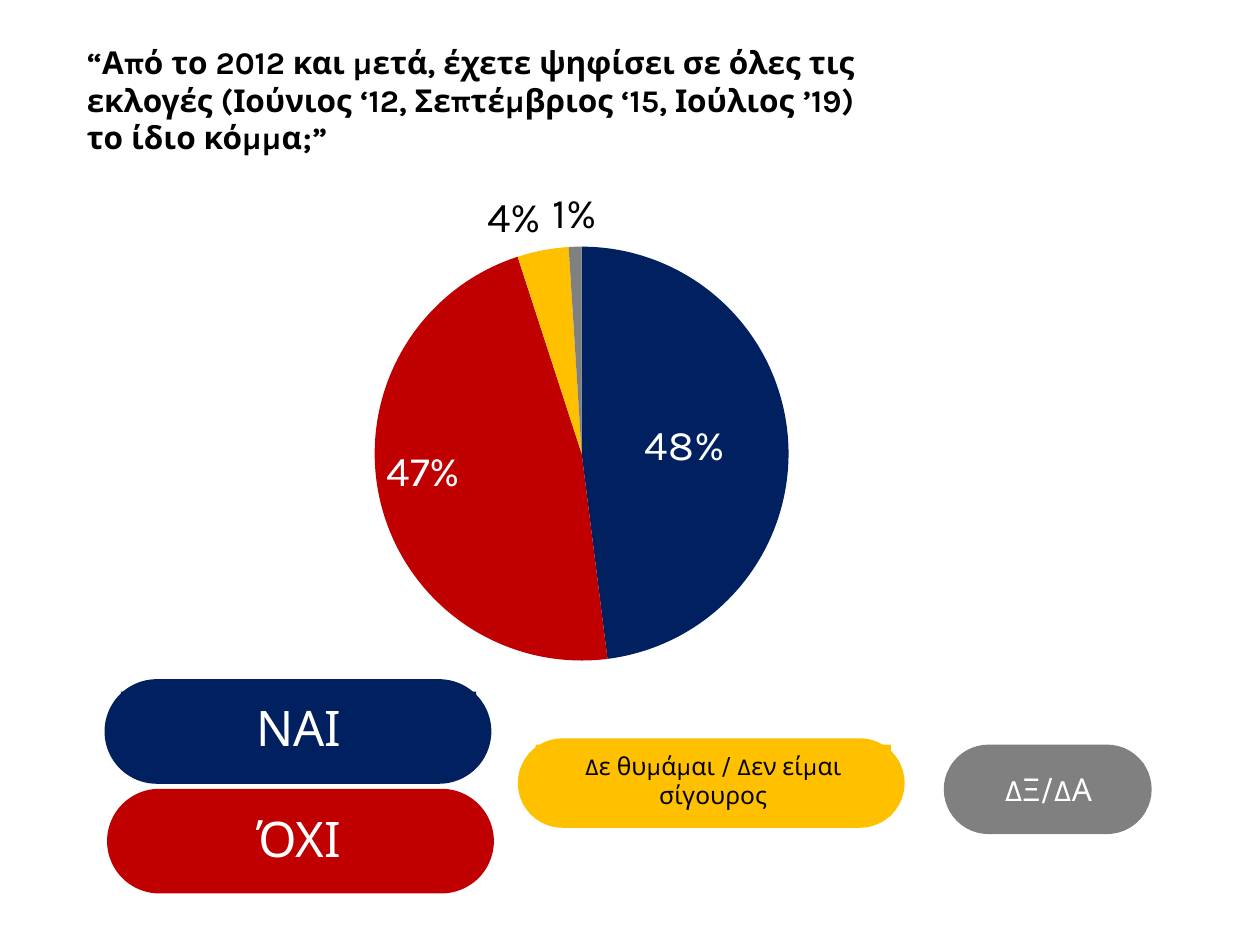
from dataclasses import dataclass
from typing import Optional

from lxml.etree import SubElement
from pptx import Presentation
from pptx.chart.data import CategoryChartData
from pptx.dml.color import RGBColor
from pptx.enum.chart import XL_CHART_TYPE as ChartType, XL_LABEL_POSITION as LabelPosition
from pptx.enum.shapes import MSO_SHAPE as Preset
from pptx.enum.text import PP_ALIGN as Align
from pptx.oxml.ns import qn
from pptx.util import Inches, Pt

SLIDE_WIDTH, SLIDE_HEIGHT = Inches(10), Inches(7.5)


@dataclass(frozen=True)
class Theme:
    navy: str = "002060"
    red: str = "C00000"
    yellow: str = "FFC000"
    gray: str = "808080"
    white: str = "FFFFFF"
    black: str = "000000"
    font: str = "Karla"
    chart_font: str = "Calibri"
    heading: int = 18
    percent: int = 24
    large: int = 28
    medium: int = 18
    small: int = 14


@dataclass(frozen=True)
class Area:
    """Percentages of the slide's width and height."""
    left: float
    top: float
    width: float
    height: float

    def lengths(self) -> tuple:
        return (int(SLIDE_WIDTH * self.left / 100), int(SLIDE_HEIGHT * self.top / 100),
                int(SLIDE_WIDTH * self.width / 100), int(SLIDE_HEIGHT * self.height / 100))


@dataclass(frozen=True)
class Answer:
    text: str
    share: int
    colour: str
    text_colour: str
    text_size: int
    pill: Area
    plate: Area
    label_position: LabelPosition
    label_colour: str
    plate_fill: Optional[str]


THEME = Theme()
QUESTION = ("“Από το 2012 και μετά, έχετε ψηφίσει σε όλες τις εκλογές "
            "(Ιούνιος ‘12, Σεπτέμβριος ‘15, Ιούλιος ’19) το ίδιο κόμμα;”")
QUESTION_AREA = Area(5.9, 3.87, 63.8, 13.47)
CHART_AREA = Area(11.4, 18.53, 76.4, 53.6)
PIE_LAYOUT = {"x": 0.24, "y": 0.14, "w": 0.43, "h": 0.82}
ANSWERS = [
    Answer("ΝΑΙ", 48, THEME.navy, THEME.white, THEME.large,
           Area(8.3, 71.87, 30.7, 11.07), Area(9.6, 73.2, 28.2, 7.6),
           LabelPosition.CENTER, THEME.white, THEME.navy),
    Answer("ΌΧΙ", 47, THEME.red, THEME.white, THEME.large,
           Area(8.5, 83.47, 30.7, 11.07), Area(8.9, 84.93, 29.6, 7.6),
           LabelPosition.INSIDE_END, THEME.white, None),
    Answer("Δε θυμάμαι / Δεν είμαι σίγουρος", 4, THEME.yellow, THEME.black, THEME.small,
           Area(41.1, 78.13, 30.7, 9.47), Area(42.5, 78.8, 28.2, 7.6),
           LabelPosition.OUTSIDE_END, THEME.black, THEME.yellow),
    Answer("ΔΞ/ΔΑ", 1, THEME.gray, THEME.white, THEME.medium,
           Area(74.9, 78.8, 16.5, 9.47), Area(75.6, 80.8, 15.2, 4.67),
           LabelPosition.OUTSIDE_END, THEME.black, THEME.gray),
]


def style_font(font, size: int, colour: str, name: str = THEME.font, bold: bool = False) -> None:
    font.name = name
    font.size = Pt(size)
    font.bold = bold
    font.color.rgb = RGBColor.from_string(colour)


def add_text(shapes, area: Area, text: str, size: int, colour: str, align: Align = Align.LEFT,
             fill: Optional[str] = None, bold: bool = False) -> None:
    shape = shapes.add_textbox(*area.lengths())
    if fill:
        shape.fill.solid()
        shape.fill.fore_color.rgb = RGBColor.from_string(fill)
    shape.text_frame.word_wrap = True
    paragraph = shape.text_frame.paragraphs[0]
    paragraph.alignment = align
    run = paragraph.add_run()
    run.text = text
    style_font(run.font, size, colour, bold=bold)


def add_answer_pill(slide, answer: Answer) -> None:
    group = slide.shapes.add_group_shape()
    pill = group.shapes.add_shape(Preset.ROUNDED_RECTANGLE, *answer.pill.lengths())
    pill.adjustments[0] = 0.5
    pill.shadow.inherit = False
    pill.fill.solid()
    pill.fill.fore_color.rgb = RGBColor.from_string(answer.colour)
    pill.line.fill.background()
    add_text(group.shapes, answer.plate, answer.text, answer.text_size,
             answer.text_colour, Align.CENTER, answer.plate_fill)


def fix_plot_area(chart, layout: dict) -> None:
    plot_area = chart.plots[0]._element.getparent()
    for old_layout in plot_area.findall(qn("c:layout")):
        plot_area.remove(old_layout)
    element = SubElement(plot_area, qn("c:layout"))
    plot_area.insert(0, element)
    manual = SubElement(element, qn("c:manualLayout"))
    settings = {"layoutTarget": "inner", "xMode": "edge", "yMode": "edge", **layout}
    for name, value in settings.items():
        SubElement(manual, qn(f"c:{name}")).set("val", str(value))


def show_percent_only(labels_element) -> None:
    labels_element.find(qn("c:showVal")).set("val", "0")
    labels_element.find(qn("c:showPercent")).set("val", "1")


def add_answer_pie(slide, answers: list) -> None:
    data = CategoryChartData()
    data.categories = [str(number) for number in range(1, len(answers) + 1)]
    data.add_series("Series 1", [answer.share for answer in answers])
    chart = slide.shapes.add_chart(ChartType.PIE, *CHART_AREA.lengths(), data).chart
    chart.has_legend = False
    chart.has_title = False
    style_font(chart.font, THEME.medium, THEME.black, THEME.chart_font)
    fix_plot_area(chart, PIE_LAYOUT)

    series = chart.plots[0].series[0]
    labels = series.data_labels
    labels.number_format = "0%"
    labels.number_format_is_linked = False
    labels.show_value = False
    labels.show_percentage = True
    style_font(labels.font, THEME.percent, THEME.white)
    for index, answer in enumerate(answers):
        point = series.points[index]
        point.format.fill.solid()
        point.format.fill.fore_color.rgb = RGBColor.from_string(answer.colour)
        point.format.line.fill.background()
        style_font(point.data_label.font, THEME.percent, answer.label_colour)
        point.data_label.position = answer.label_position
    for label in series._element.iter(qn("c:dLbl")):
        show_percent_only(label)


def main() -> None:
    presentation = Presentation()
    presentation.slide_width, presentation.slide_height = SLIDE_WIDTH, SLIDE_HEIGHT
    slide = presentation.slides.add_slide(presentation.slide_layouts[6])
    add_text(slide.shapes, QUESTION_AREA, QUESTION, THEME.heading, THEME.black, bold=True)
    add_answer_pie(slide, ANSWERS)
    for answer in ANSWERS:
        add_answer_pill(slide, answer)
    presentation.save("out.pptx")


if __name__ == "__main__":
    main()
